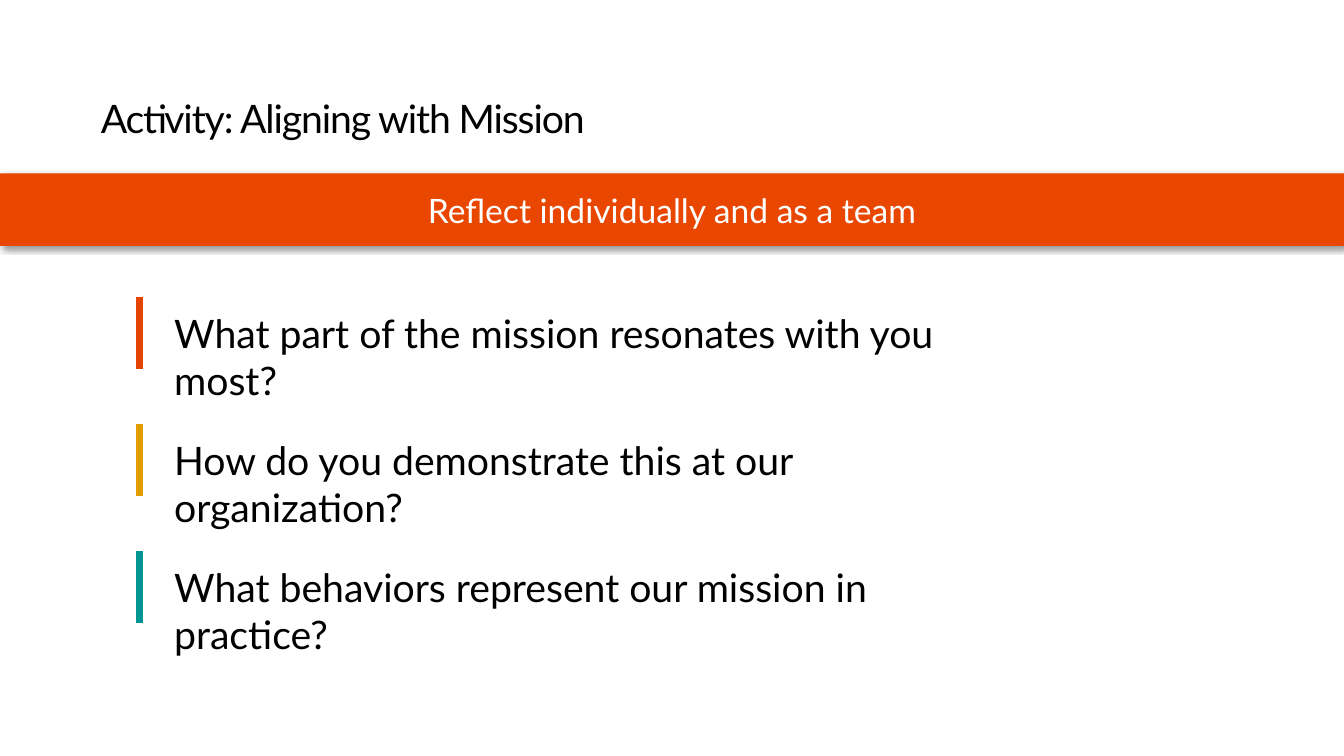
from dataclasses import dataclass

from lxml import etree
from pptx import Presentation
from pptx.dml.color import RGBColor
from pptx.enum import shapes as kinds, text as txt
from pptx.oxml import ns, parse_xml
from pptx.shapes.autoshape import Shape
from pptx.slide import Slide
from pptx.text.text import _Paragraph as Para
from pptx.util import Cm, Pt

WIDE, HIGH = 33.87, 19.05
FIRST, STEP = 7.49, 3.2
BAR_X, BAR_H = 3.51, 1.8
TEXT_X, DROP, TEXT_H = 4.14, 0.18, 1.45


@dataclass
class Prompt:
    text: str
    color: str
    width: float


PROMPTS = [
    Prompt("What part of the mission resonates with you most?", "E44400", 21.59),
    Prompt("How do you demonstrate this at our organization?", "E19E00", 21.39),
    Prompt("What behaviors represent our mission in practice?", "009693", 21.39),
]


def paint(color: str) -> RGBColor:
    return RGBColor.from_string(color)


def write(shape: Shape, words: str, size: int, color: str) -> Para:
    frame = shape.text_frame
    frame.word_wrap = True
    para = frame.paragraphs[0]
    para.text = words
    para.font.name = "Lato"
    para.font.size = Pt(size)
    para.font.color.rgb = paint(color)
    return para


def add_title(slide: Slide) -> None:
    box = slide.shapes.add_textbox(Cm(2.54), Cm(1.93), Cm(28.78), Cm(1.65))
    para = write(box, "Activity: Aligning with Mission", 28, "000000")
    para.line_spacing = 0.9
    para.font._rPr.set("spc", "-80")
    frame = box.text_frame
    frame.vertical_anchor = txt.MSO_ANCHOR.BOTTOM
    frame.margin_left = frame.margin_right = frame.margin_bottom = 0


def add_banner(slide: Slide) -> None:
    band = slide.shapes.add_shape(
        kinds.MSO_SHAPE.RECTANGLE, 0, Cm(4.37), Cm(WIDE), Cm(1.83))
    band.fill.solid()
    band.fill.fore_color.rgb = paint("E94600")
    band.line.fill.background()
    band._element.spPr.append(parse_xml(
        f'<a:effectLst {ns.nsdecls("a")}>'
        f'<a:outerShdw blurRad="{Pt(4)}" dist="{Pt(3)}" dir="2700000" '
        'algn="tl" rotWithShape="0"><a:srgbClr val="000000">'
        '<a:alpha val="40000"/></a:srgbClr></a:outerShdw></a:effectLst>'))
    para = write(band, "Reflect individually and as a team", 24, "FFFFFF")
    para.alignment = txt.PP_ALIGN.CENTER
    band.text_frame.vertical_anchor = txt.MSO_ANCHOR.MIDDLE


def add_prompt(slide: Slide, item: Prompt, top: float) -> None:
    box = slide.shapes.add_textbox(
        Cm(TEXT_X), Cm(top + DROP), Cm(item.width), Cm(TEXT_H))
    write(box, item.text, 28, "000000")
    bar = slide.shapes.add_connector(
        kinds.MSO_CONNECTOR.STRAIGHT,
        Cm(BAR_X), Cm(top), Cm(BAR_X), Cm(top + BAR_H))
    bar.line.color.rgb = paint(item.color)
    bar.line.width = Pt(5)
    etree.SubElement(bar._element.spPr, ns.qn("a:effectLst"))


def main() -> None:
    deck = Presentation()
    deck.slide_width, deck.slide_height = Cm(WIDE), Cm(HIGH)
    slide = deck.slides.add_slide(deck.slide_layouts[6])
    add_title(slide)
    add_banner(slide)
    for row, item in enumerate(PROMPTS):
        add_prompt(slide, item, FIRST + row * STEP)
    deck.save("out.pptx")


if __name__ == "__main__":
    main()
